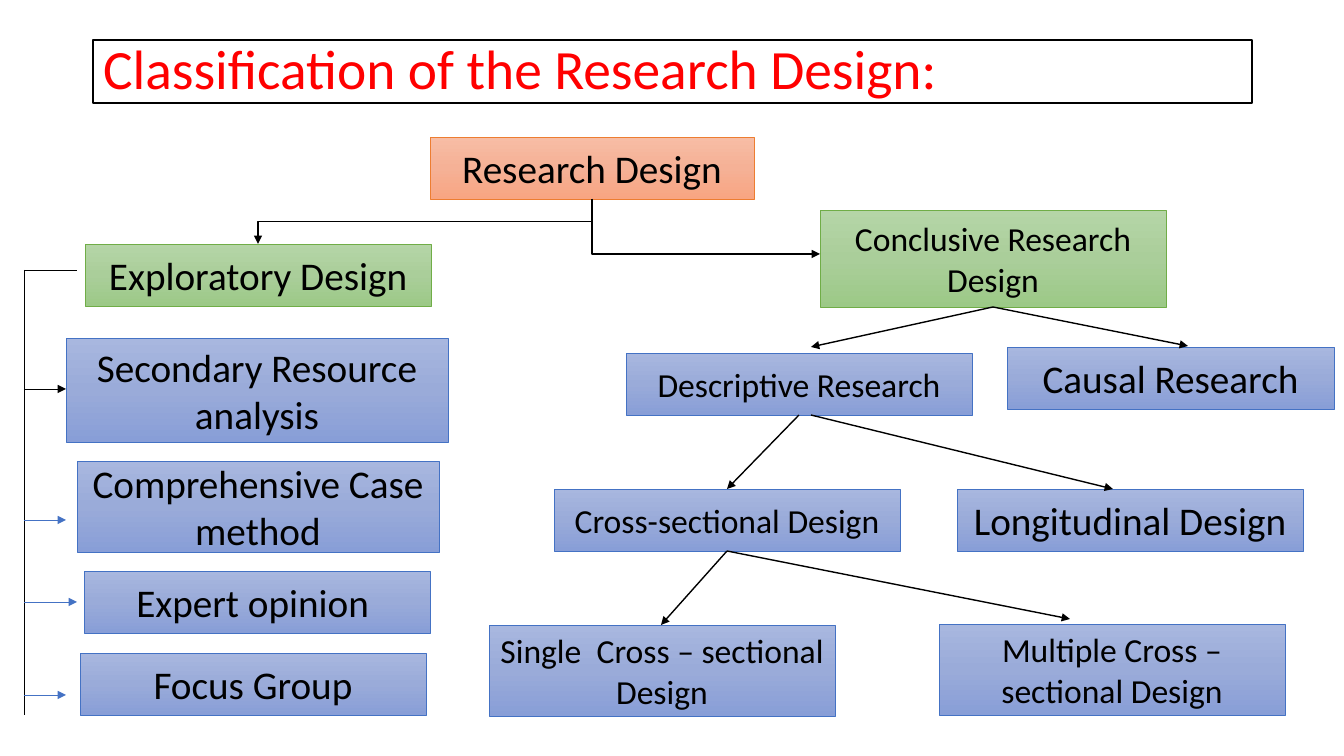
from copy import deepcopy

from pptx import Presentation
from pptx.dml.color import RGBColor
from pptx.enum.shapes import MSO_CONNECTOR, MSO_SHAPE
from pptx.enum.text import MSO_ANCHOR, MSO_AUTO_SIZE, PP_ALIGN
from pptx.oxml.ns import qn
from pptx.util import Emu, Pt

STRAIGHT = MSO_CONNECTOR.STRAIGHT
ELBOW = MSO_CONNECTOR.ELBOW
RECTANGLE = MSO_SHAPE.RECTANGLE
MIDDLE = MSO_ANCHOR.MIDDLE
NO_AUTOFIT = MSO_AUTO_SIZE.NONE
LEFT = PP_ALIGN.LEFT
CENTER = PP_ALIGN.CENTER

FONT = "Calibri"
BLACK, BLUE_LINE = "000000", "4472C4"
EMU_PER_INCH, PX_PER_INCH = 914400, 100.8
TITLE = "Classification of the Research Design:"
TITLE_FRAME = (93, 40, 1159, 63)

STYLES = {
    "orange": (("F7BDA5", "F5B196", "F8A582"), "ED7D31"),
    "green": (("B5D5A7", "AACE9A", "9CC987"), "70AD47"),
    "blue": (("A8B7DF", "9AABD9", "889ED7"), BLUE_LINE),
}

BOXES = [
    ("Research Design", "orange", 28, (430, 137, 324, 62)),
    ("Exploratory Design", "green", 28, (85, 244, 346, 62)),
    ("Conclusive Research Design", "green", 24, (820, 210, 346, 97)),
    ("Causal Research", "blue", 28, (1007, 347, 327, 62)),
    ("Descriptive Research", "blue", 24, (626, 353, 346, 62)),
    ("Longitudinal Design", "blue", 28, (957, 489, 346, 62)),
    ("Cross-sectional Design", "blue", 24, (554, 489, 346, 62)),
    ("Multiple Cross – sectional Design", "blue", 24, (939, 624, 346, 91)),
    ("Single  Cross – sectional Design", "blue", 24, (489, 625, 346, 91)),
    ("Secondary Resource analysis", "blue", 28, (66, 338, 382, 104)),
    ("Comprehensive Case method", "blue", 28, (77, 461, 362, 91)),
    ("Expert opinion ", "blue", 28, (84, 571, 346, 62)),
    ("Focus Group", "blue", 28, (80, 653, 346, 62)),
]

ROOT_EXIT = (592, 199)
ELBOWS = [((258, 244), "bentConnector3"), ((820, 254), "bentConnector2")]

BRANCHES = [
    ((993, 307), (811, 347)),
    ((993, 307), (1188, 346)),
    ((799, 415), (727, 489)),
    ((811, 415), (1113, 489)),
    ((727, 551), (661, 625)),
    ((727, 551), (1070, 619)),
]

TRUNK_X, TRUNK_TOP, TRUNK_BOTTOM, TRUNK_START = 24, 270, 715, 77
TWIGS = [(389, 66, BLACK), (520, 66, BLUE_LINE), (602, 77, BLUE_LINE), (695, 66, BLUE_LINE)]


def px(value):
    return Emu(round(value * EMU_PER_INCH / PX_PER_INCH))


def color(value):
    return RGBColor.from_string(value)


def write(shape, text, size, text_color, alignment):
    frame = shape.text_frame
    frame.word_wrap = True
    frame.auto_size = NO_AUTOFIT
    frame.vertical_anchor = MIDDLE
    frame.text = text
    paragraph = frame.paragraphs[0]
    paragraph.alignment = alignment
    paragraph.font.name = FONT
    paragraph.font.size = Pt(size)
    paragraph.font.color.rgb = color(text_color)
    return paragraph


def outline(shape, line_color, width):
    shape.line.color.rgb = color(line_color)
    shape.line.width = Pt(width)


def fill_gradient(shape, stop_colors):
    shape.fill.gradient()
    shape.fill.gradient_angle = 270
    stop_list = next(shape.element.iter(qn("a:gsLst")))
    stop_list.insert(1, deepcopy(stop_list[0]))
    for index, stop in enumerate(shape.fill.gradient_stops):
        stop.position = index / 2
        stop.color.rgb = color(stop_colors[index])


def add_box(slide, text, style, size, frame):
    stop_colors, line_color = STYLES[style]
    shape = slide.shapes.add_shape(RECTANGLE, *map(px, frame))
    shape.shadow.inherit = False
    fill_gradient(shape, stop_colors)
    outline(shape, line_color, 0.5)
    write(shape, text, size, BLACK, CENTER)


def add_line(slide, start, end, line_color=BLACK, width=1, arrow=True, kind=STRAIGHT):
    connector = slide.shapes.add_connector(kind, *map(px, (*start, *end)))
    outline(connector, line_color, width)
    properties = connector.element.spPr
    if arrow:
        head = properties.find(qn("a:ln")).makeelement(qn("a:tailEnd"), {"type": "triangle"})
        properties.find(qn("a:ln")).append(head)
    properties.append(properties.makeelement(qn("a:effectLst"), {}))
    return connector


def add_elbow(slide, start, end, geometry):
    center_x, center_y = (start[0] + end[0]) / 2, (start[1] + end[1]) / 2
    half_width, half_height = (end[1] - start[1]) / 2, abs(end[0] - start[0]) / 2
    side = 1 if end[0] < start[0] else -1
    connector = add_line(
        slide,
        (center_x - side * half_width, center_y - half_height),
        (center_x + side * half_width, center_y + half_height),
        kind=ELBOW,
    )
    properties = connector.element.spPr
    properties.find(qn("a:xfrm")).set("rot", str(side * 90 % 360 * 60000))
    properties.find(qn("a:prstGeom")).set("prst", geometry)


def main():
    presentation = Presentation()
    presentation.slide_width, presentation.slide_height = px(1344), px(756)
    slide = presentation.slides.add_slide(presentation.slide_layouts[5])

    title = slide.shapes.title
    title.left, title.top, title.width, title.height = map(px, TITLE_FRAME)
    title.fill.solid()
    title.fill.fore_color.rgb = color("FFFFFF")
    outline(title, BLACK, 1)
    write(title, TITLE, 39.6, "FF0000", LEFT).line_spacing = 0.9

    for box in BOXES:
        add_box(slide, *box)
    for end, geometry in ELBOWS:
        add_elbow(slide, ROOT_EXIT, end, geometry)
    for start, end in BRANCHES:
        add_line(slide, start, end)

    corner = (TRUNK_X, TRUNK_TOP)
    for end in ((TRUNK_START, TRUNK_TOP), (TRUNK_X, TRUNK_BOTTOM)):
        add_line(slide, corner, end, width=0.5, arrow=False)
    for y, end_x, line_color in TWIGS:
        add_line(slide, (TRUNK_X, y), (end_x, y), line_color, 0.5)

    presentation.save("out.pptx")


if __name__ == "__main__":
    main()
